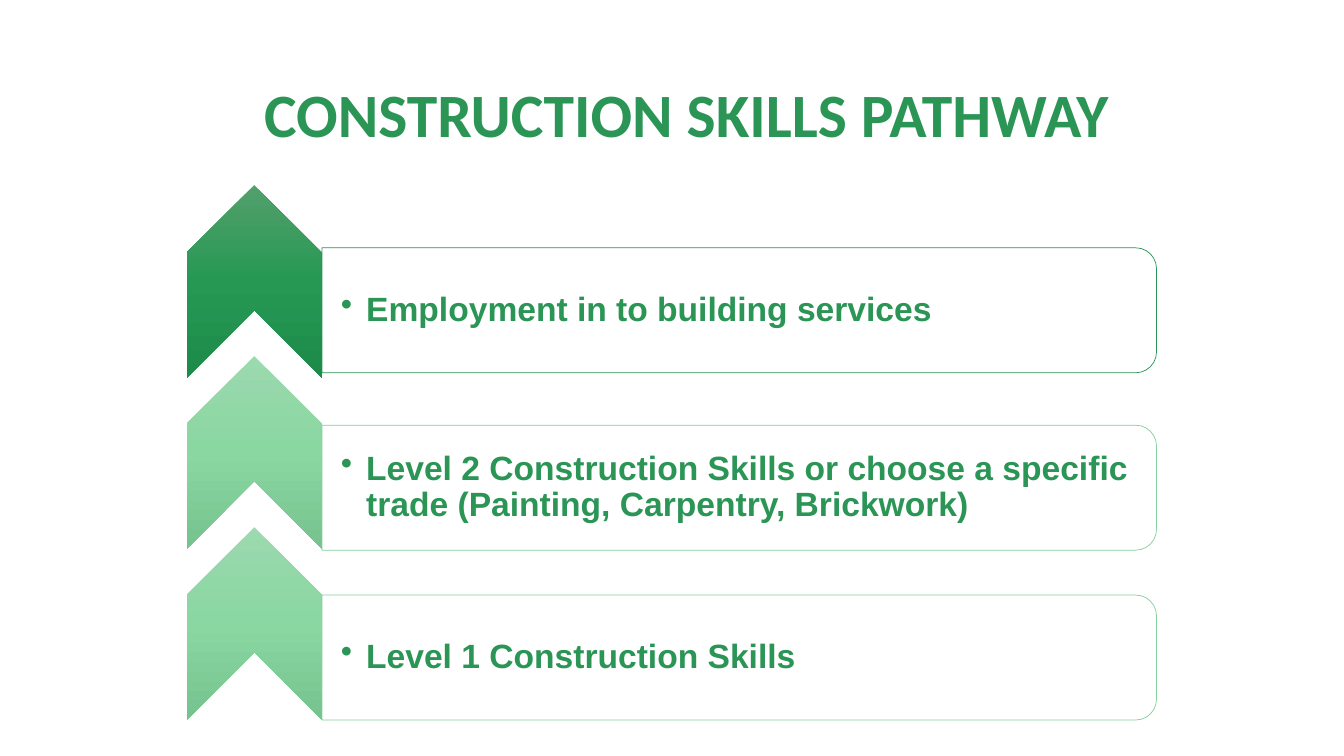
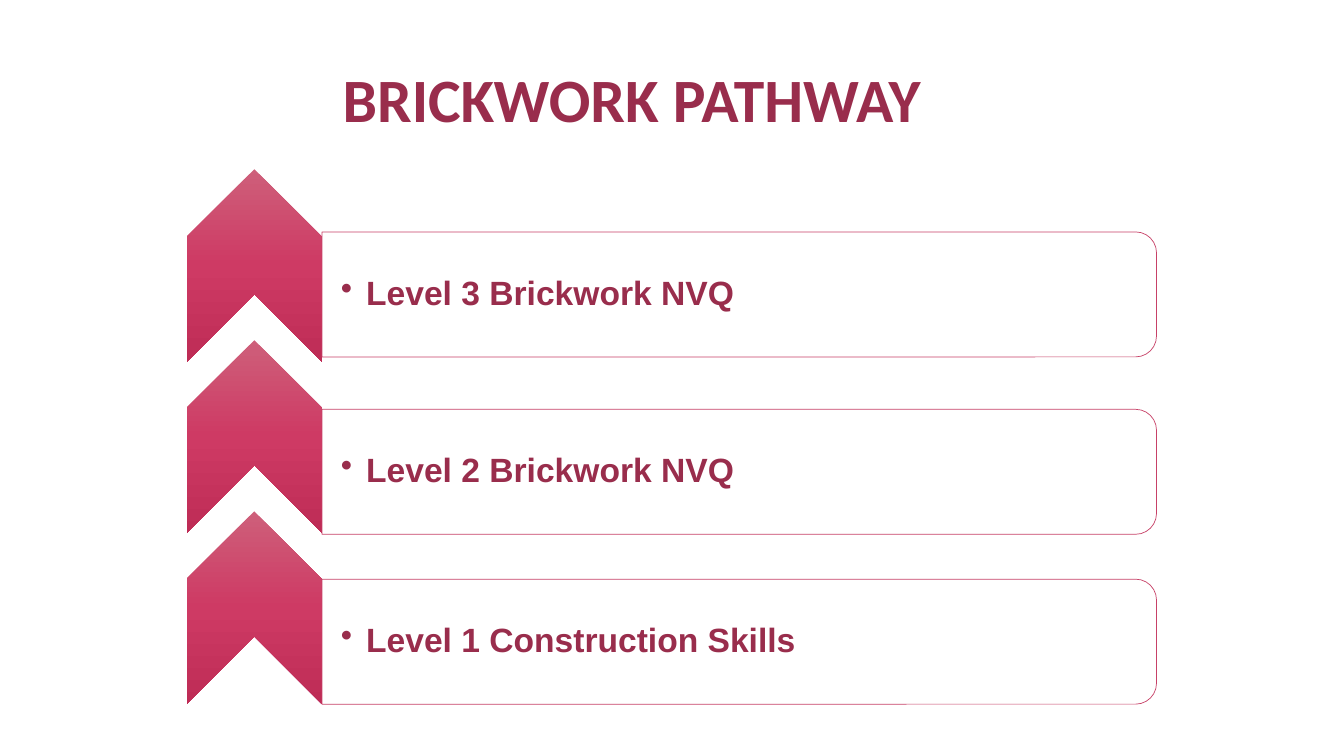
from copy import deepcopy

from lxml.etree import SubElement as Sub
from pptx import Presentation
from pptx.dml.color import RGBColor as Rgb
from pptx.enum.shapes import MSO_SHAPE as Kind
from pptx.enum.text import MSO_ANCHOR as Anchor, PP_ALIGN as Align
from pptx.oxml.ns import qn
from pptx.util import Cm, Pt

HUES = {
    "white": "FFFFFF",
    "green": "2B9556", "green line": "2B9255", "mint line": "83D09B",
    "red": "992D4C", "red line": "C74167",
}
# Chevron shades, from top to bottom
SHADES = {
    "green": ("53A06C", "269854", "1D8B4A"),
    "mint": ("9BD9AE", "8AD7A2", "77C38F"),
    "red": ("CE5F7A", "CE3A64", "BE2C56"),
}

# Centres in cm: the chevrons have an equal step, the bars their own
MID_X, MID_Y, STEP = 6.41, 7.09, 4.31
BAR_X, BAR_YS = 18.63, (7.82, 12.29, 16.57)


def color(name):
    return Rgb.from_string(HUES[name])


def write(frame, text, size, font, hue, gap, anchor=Anchor.TOP,
          inset=None, bullet=False):
    """Put one bold paragraph in a text frame."""
    frame.word_wrap = True
    frame.vertical_anchor = anchor
    if inset:
        (frame.margin_left, frame.margin_top,
         frame.margin_right, frame.margin_bottom) = map(Cm, inset)
    para = frame.paragraphs[0]
    para.alignment = Align.LEFT
    para.line_spacing = gap
    if bullet:
        props = para._p.get_or_add_pPr()
        props.set("marL", str(Cm(0.64)))
        props.set("indent", str(-Cm(0.64)))
        Sub(props, qn("a:buChar"), char="•")
    run = para.add_run()
    run.text = text
    run.font.size, run.font.name, run.font.bold = Pt(size), font, True
    run.font.color.rgb = color(hue)


def block(slide, kind, x, y, wide, high, turn):
    """Add a turned shape, placed by its centre."""
    shape = slide.shapes.add_shape(
        kind, Cm(x - wide / 2), Cm(y - high / 2), Cm(wide), Cm(high))
    shape.rotation = turn
    shape.shadow.inherit = False
    return shape


def arrow(slide, y, shade):
    """Add an upward chevron whose shading stays upright."""
    shape = block(slide, Kind.CHEVRON, MID_X, y, 4.85, 3.4, 270)
    shape.line.fill.background()
    fill = shape.fill
    fill.gradient()
    fill.gradient_angle = 270
    grad = shape._element.spPr.find(qn("a:gradFill"))
    grad.set("rotWithShape", "0")
    stops = grad.find(qn("a:gsLst"))
    stops.append(deepcopy(stops[0]))
    for stop, hue, place in zip(fill.gradient_stops, SHADES[shade], (0, 0.5, 1)):
        stop.color.rgb = Rgb.from_string(hue)
        stop.position = place


def bar(slide, y, text, hue, edge):
    """Add a bar rounded on its right, with its label."""
    shape = block(slide, Kind.ROUND_2_SAME_RECTANGLE, BAR_X, y, 3.15, 21.03, 90)
    shape.fill.solid()
    shape.fill.fore_color.rgb = color("white")
    tint = shape._element.spPr.find(qn("a:solidFill"))[0]
    Sub(tint, qn("a:alpha"), val="90000")
    shape.line.color.rgb = color(edge)
    shape.line.width = Pt(0.5)
    label = slide.shapes.add_textbox(
        Cm(8.11), Cm(y - 1.42), Cm(20.88), Cm(2.84))
    write(label.text_frame, text, 24, "Arial", hue, 0.9, Anchor.MIDDLE,
          (0.48, 0.04, 0.04, 0.04), bullet=True)


def page(deck, title, spot, hue, rows, shift=0):
    """Build a pathway slide: title, then one chevron and bar per row."""
    slide = deck.slides.add_slide(deck.slide_layouts[5])
    head = slide.shapes.title
    head.left, head.top, head.width, head.height = map(Cm, spot)
    write(head.text_frame, title, 44, "Calibri", hue, 0.85)
    for i, (text, shade) in enumerate(rows):
        arrow(slide, MID_Y + i * STEP + shift, shade)
        bar(slide, BAR_YS[i] + shift, text, hue, shade + " line")


def main():
    deck = Presentation()
    deck.slide_width, deck.slide_height = Cm(33.87), Cm(19.05)

    # Construction skills
    page(deck, "CONSTRUCTION SKILLS PATHWAY", (6.4, 2.06, 22.4, 2.34), "green", [
        ("Employment in to building services", "green"),
        ("Level 2 Construction Skills or choose a specific trade "
         "(Painting, Carpentry, Brickwork)", "mint"),
        ("Level 1 Construction Skills", "mint"),
    ])

    # Brickwork
    page(deck, "BRICKWORK PATHWAY", (8.38, 1.7, 15.8, 2.31), "red", [
        ("Level 3 Brickwork NVQ", "red"),
        ("Level 2 Brickwork NVQ", "red"),
        ("Level 1 Construction Skills", "red"),
    ], shift=-0.4)

    deck.save("out.pptx")


if __name__ == "__main__":
    main()
